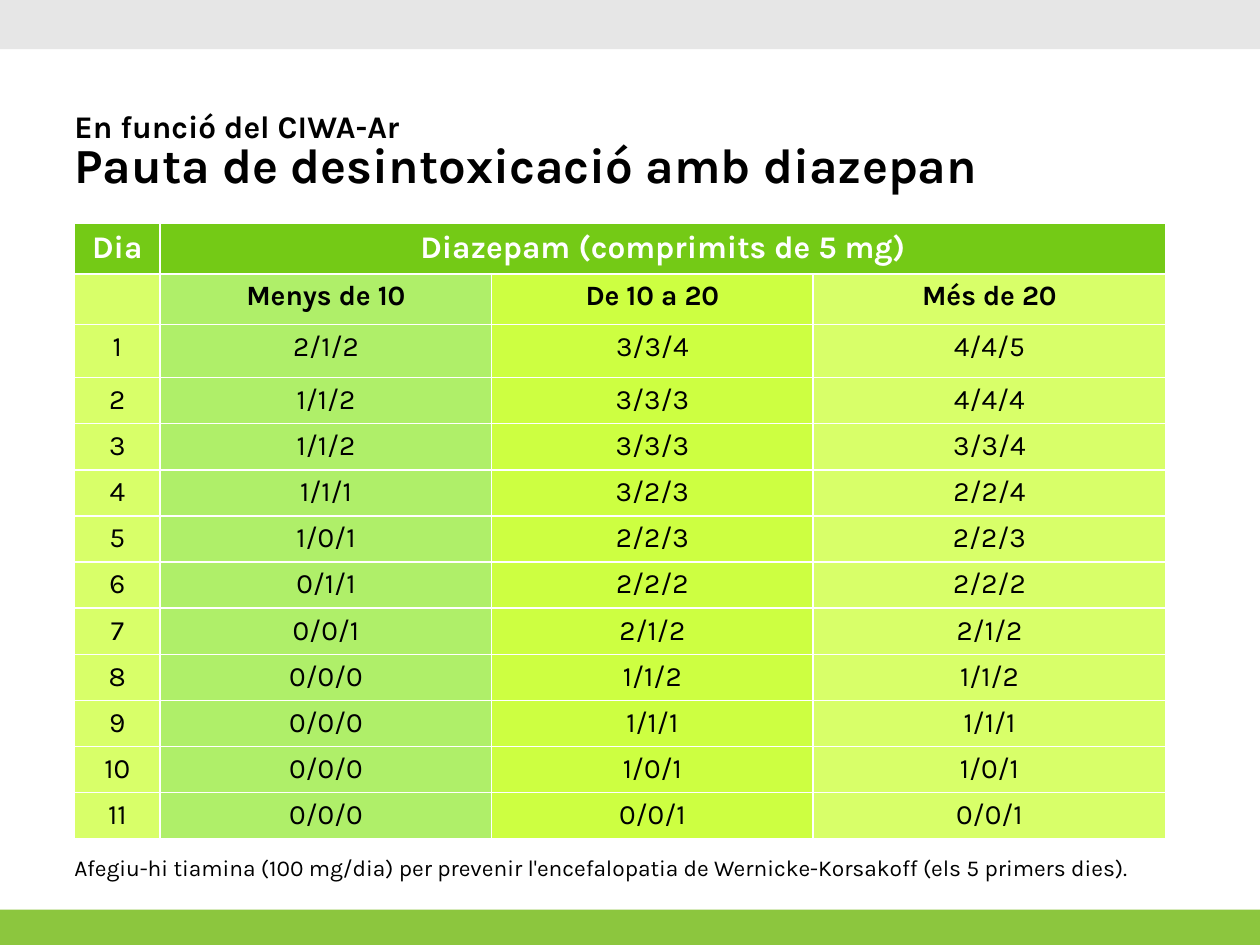
from lxml import etree
from pptx import Presentation
from pptx.dml.color import RGBColor
from pptx.enum.shapes import MSO_SHAPE
from pptx.enum.text import MSO_ANCHOR, MSO_AUTO_SIZE, PP_ALIGN
from pptx.oxml.ns import qn
from pptx.util import Cm, Pt

RECTANGLE = MSO_SHAPE.RECTANGLE
TOP, NO_FIT = MSO_ANCHOR.TOP, MSO_AUTO_SIZE.NONE
LEFT, CENTER = PP_ALIGN.LEFT, PP_ALIGN.CENTER

FONT = "Karla"
BLACK = RGBColor(0x00, 0x00, 0x00)
WHITE = RGBColor(0xFF, 0xFF, 0xFF)
GREY = RGBColor(0xE6, 0xE6, 0xE6)
GREEN = RGBColor(0x8C, 0xC6, 0x3E)
HEADER_GREEN = RGBColor(0x74, 0xCA, 0x16)
PALE_LIME = RGBColor(0xD8, 0xFF, 0x69)
MINT = RGBColor(0xAF, 0xEF, 0x69)
LIME = RGBColor(0xCD, 0xFF, 0x41)

# Content
SUBTITLE = "En funció del CIWA-Ar"
TITLE = "Pauta de desintoxicació amb diazepan"
FOOTNOTE = ("Afegiu-hi tiamina (100 mg/dia) per prevenir l'encefalopatia "
            "de Wernicke-Korsakoff (els 5 primers dies).")
HEADINGS = [
    ("Dia", "Diazepam (comprimits de 5 mg)", "", ""),
    ("", "Menys de 10", "De 10 a 20", "Més de 20"),
]
DOSES = [
    ("2/1/2", "3/3/4", "4/4/5"),
    ("1/1/2", "3/3/3", "4/4/4"),
    ("1/1/2", "3/3/3", "3/3/4"),
    ("1/1/1", "3/2/3", "2/2/4"),
    ("1/0/1", "2/2/3", "2/2/3"),
    ("0/1/1", "2/2/2", "2/2/2"),
    ("0/0/1", "2/1/2", "2/1/2"),
    ("0/0/0", "1/1/2", "1/1/2"),
    ("0/0/0", "1/1/1", "1/1/1"),
    ("0/0/0", "1/0/1", "1/0/1"),
    ("0/0/0", "0/0/1", "0/0/1"),
]
ROWS = HEADINGS + [(str(day), *doses) for day, doses in enumerate(DOSES, 1)]

# Layout, in centimetres
MARGIN = 1.5
BARS = [(0, 0.99, GREY), (18.34, 0.71, GREEN)]
COLUMN_WIDTHS = [1.73, 6.68, 6.48, 7.11]
COLUMN_FILLS = [PALE_LIME, MINT, LIME, PALE_LIME]
ROW_HEIGHTS = [1.02, 1.02, 1.07] + [0.93] * 10


def add_run(paragraph, text, size, color=BLACK, bold=False):
    run = paragraph.add_run()
    run.text = text
    run.font.name = FONT
    run.font.size = Pt(size)
    run.font.bold = bold
    run.font.color.rgb = color


def set_frame(frame, vertical_inset):
    frame.word_wrap = True
    frame.auto_size = NO_FIT
    frame.vertical_anchor = TOP
    frame.margin_left = frame.margin_right = 0
    frame.margin_top = frame.margin_bottom = Cm(vertical_inset)


def add_border(cell, side):
    line = etree.SubElement(cell._tc.get_or_add_tcPr(), qn(f"a:ln{side}"), w=str(Pt(1)))
    fill = etree.SubElement(line, qn("a:solidFill"))
    etree.SubElement(fill, qn("a:srgbClr"), val=str(WHITE))


def add_bars(slide, width):
    for top, height, color in BARS:
        bar = slide.shapes.add_shape(RECTANGLE, 0, Cm(top), width, Cm(height))
        bar.shadow.inherit = False
        bar.fill.solid()
        bar.fill.fore_color.rgb = color
        bar.line.fill.background()


def add_title(slide):
    title = slide.shapes.title
    title.left, title.top, title.width, title.height = Cm(MARGIN), Cm(1.8), Cm(20.93), Cm(1.91)
    set_frame(title.text_frame, 0.13)
    heading = title.text_frame.paragraphs[0]
    heading.alignment = LEFT
    heading.line_spacing = Pt(28)
    add_run(heading, SUBTITLE, 18, bold=True)
    heading.add_line_break()
    add_run(heading, TITLE, 28, bold=True)


def add_dose_table(slide):
    table = slide.shapes.add_table(
        len(ROWS), len(COLUMN_WIDTHS), Cm(MARGIN), Cm(4.5),
        Cm(sum(COLUMN_WIDTHS)), Cm(sum(ROW_HEIGHTS))).table
    table.first_row = table.horz_banding = False
    for column, width in zip(table.columns, COLUMN_WIDTHS):
        column.width = Cm(width)
    for row, height in zip(table.rows, ROW_HEIGHTS):
        row.height = Cm(height)
    table.cell(0, 1).merge(table.cell(0, 3))

    last_row, last_column = len(ROWS) - 1, len(COLUMN_WIDTHS) - 1
    for r, texts in enumerate(ROWS):
        for c, text in enumerate(texts):
            cell = table.cell(r, c)
            # White lines only between cells, none around the table
            inner_sides = {
                "L": c > 0 and not cell.is_spanned,
                "R": c < last_column and (r > 0 or c == 0),
                "T": r > 0,
                "B": r < last_row,
            }
            for side, shown in inner_sides.items():
                if shown:
                    add_border(cell, side)
            cell.fill.solid()
            cell.fill.fore_color.rgb = COLUMN_FILLS[c] if r else HEADER_GREEN
            if cell.is_spanned:
                continue
            label = cell.text_frame.paragraphs[0]
            label.alignment = CENTER
            label.font.size = Pt(16)
            if text:
                add_run(label, text, 16 if r else 18, BLACK if r else WHITE,
                        bold=r < len(HEADINGS))


def add_footnote(slide):
    footnote = slide.shapes.add_textbox(Cm(MARGIN), Cm(17.22), Cm(23.27), Cm(0.56))
    set_frame(footnote.text_frame, 0)
    add_run(footnote.text_frame.paragraphs[0], FOOTNOTE, 13)


def main():
    deck = Presentation()
    deck.slide_width, deck.slide_height = Cm(25.4), Cm(19.05)
    slide = deck.slides.add_slide(deck.slide_layouts[5])
    add_bars(slide, deck.slide_width)
    add_title(slide)
    add_dose_table(slide)
    add_footnote(slide)
    deck.save("out.pptx")


if __name__ == "__main__":
    main()
